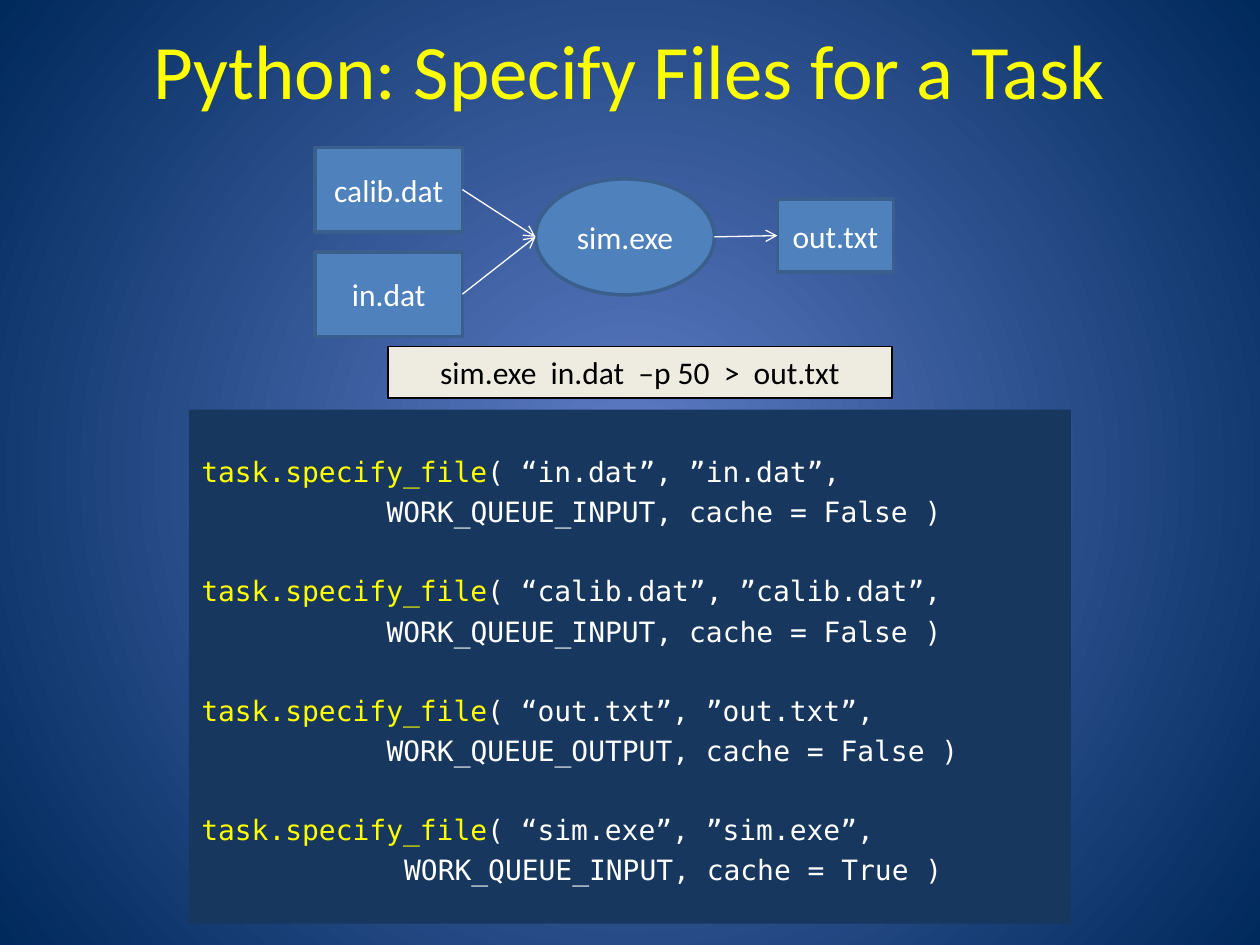
from pptx import Presentation
from pptx import util as u
from pptx.dml.color import RGBColor
from pptx.enum import shapes as s, text as t
from pptx.oxml import parse_xml
from pptx.oxml.ns import nsdecls, qn


def rgb(code):
    return RGBColor.from_string(code)


def box(kind, area, words, size, ink, fill=None, edge=None, width=2):
    """Add a shape with one centred line of text; no fill or edge if None."""
    item = slide.shapes.add_shape(kind, *map(u.Inches, area))
    item.shadow.inherit = False
    for part, code in ((item.fill, fill), (item.line.fill, edge)):
        if code:
            part.solid()
            part.fore_color.rgb = rgb(code)
        else:
            part.background()
    if edge:
        item.line.width = u.Pt(width)
    frame = item.text_frame
    frame.word_wrap = True
    frame.vertical_anchor = t.MSO_ANCHOR.MIDDLE
    para = frame.paragraphs[0]
    para.text = words
    para.alignment = t.PP_ALIGN.CENTER
    para.font.name = "Calibri"
    para.font.size = u.Pt(size)
    para.font.color.rgb = rgb(ink)
    return item


WHITE, YELLOW, BLUE, EDGE = "FFFFFF", "FFFF00", "4F81BD", "3A5F8C"
RECT, OVAL = s.MSO_SHAPE.RECTANGLE, s.MSO_SHAPE.OVAL

deck = Presentation()
deck.slide_width, deck.slide_height = u.Inches(10), u.Inches(7.5)
slide = deck.slides.add_slide(deck.slide_layouts[6])

# Radial background
back = slide.background.fill
back.gradient()
for stop, place, code in zip(back.gradient_stops, (0, 1), ("5E7CC5", "00295C")):
    stop.position = place
    stop.color.rgb = rgb(code)
lin = slide.element.find(".//" + qn("a:lin"))
lin.getparent().replace(lin, parse_xml(
    f'<a:path {nsdecls("a")} path="circle">'
    '<a:fillToRect l="50000" t="50000" r="50000" b="50000"/></a:path>'))

# Title
title = slide.shapes.add_textbox(*map(u.Inches, (0.5, -0.08, 9, 1.25)))
frame = title.text_frame
frame.word_wrap = True
frame.vertical_anchor = t.MSO_ANCHOR.MIDDLE
para = frame.paragraphs[0]
para.text = "Python: Specify Files for a Task"
para.alignment = t.PP_ALIGN.CENTER
para.font.name = "Calibri"
para.font.size = u.Pt(44)
para.font.color.rgb = rgb(YELLOW)

# Code panel: each call is followed by an indented second line
calls = [
    ("in.dat", "WORK_QUEUE_INPUT, cache = False )", 1.47),
    ("calib.dat", "WORK_QUEUE_INPUT, cache = False )", 1.47),
    ("out.txt", "WORK_QUEUE_OUTPUT, cache = False )", 1.47),
    ("sim.exe", "WORK_QUEUE_INPUT, cache = True )", 1.61),
]
panel = slide.shapes.add_shape(RECT, *map(u.Inches, (1.5, 3.25, 7, 4.08)))
panel.shadow.inherit = False
panel.fill.solid()
panel.fill.fore_color.rgb = rgb("17375E")
panel.line.fill.background()
code = panel.text_frame
code.word_wrap = True
code.vertical_anchor = t.MSO_ANCHOR.TOP
code.margin_top = u.Inches(0.36)
for i, (name, rest, indent) in enumerate(calls):
    head = code.add_paragraph() if i else code.paragraphs[0]
    head.space_before = u.Pt(26 if i else 0)
    call = head.add_run()
    call.text = "task.specify_file"
    call.font.color.rgb = rgb(YELLOW)
    args = head.add_run()
    args.text = f"( “{name}”, ”{name}”,"
    args.font.color.rgb = rgb(WHITE)
    tail = code.add_paragraph()
    tail.text = rest
    tail.space_before = u.Pt(3.7)
    tail.font.color.rgb = rgb(WHITE)
    tail._p.get_or_add_pPr().set("marL", str(u.Inches(indent)))
    for para in (head, tail):
        para.alignment = t.PP_ALIGN.LEFT
        para.font.name = "DejaVu Sans Mono"
        para.font.size = u.Pt(16)

# Data flow
box(OVAL, (4.25, 1.42, 1.42, 0.92), "sim.exe", 18, WHITE, BLUE, EDGE)
files = [
    ("in.dat", (2.5, 2, 1.17, 0.67)),
    ("calib.dat", (2.5, 1.17, 1.17, 0.67)),
    ("out.txt", (6.17, 1.58, 0.92, 0.58)),
]
for name, area in files:
    node = box(RECT, area, name, 18, WHITE, BLUE, EDGE)
    node.text_frame.margin_left = node.text_frame.margin_right = u.Inches(0.05)
    ends = (5.67, 1.88, 6.17, 1.88) if name == "out.txt" else (3.67, 1.88, 4.25, 1.88)
    link = slide.shapes.add_connector(s.MSO_CONNECTOR.STRAIGHT, *map(u.Inches, ends))
    if name == "out.txt":
        link.end_connect(node, 1)
    else:
        link.begin_connect(node, 3)
    link.line.width = u.Pt(0.75)
    link.line.color.rgb = rgb(WHITE)
    link.line._get_or_add_ln().append(
        parse_xml(f'<a:tailEnd {nsdecls("a")} type="arrow"/>'))
    link._element.spPr.append(parse_xml(f'<a:effectLst {nsdecls("a")}/>'))

# Command line
box(RECT, (3.08, 2.75, 4, 0.41), "sim.exe  in.dat  –p 50  >  out.txt", 18,
    "000000", "EEECE1", "000000", 0.75)

deck.save("out.pptx")
